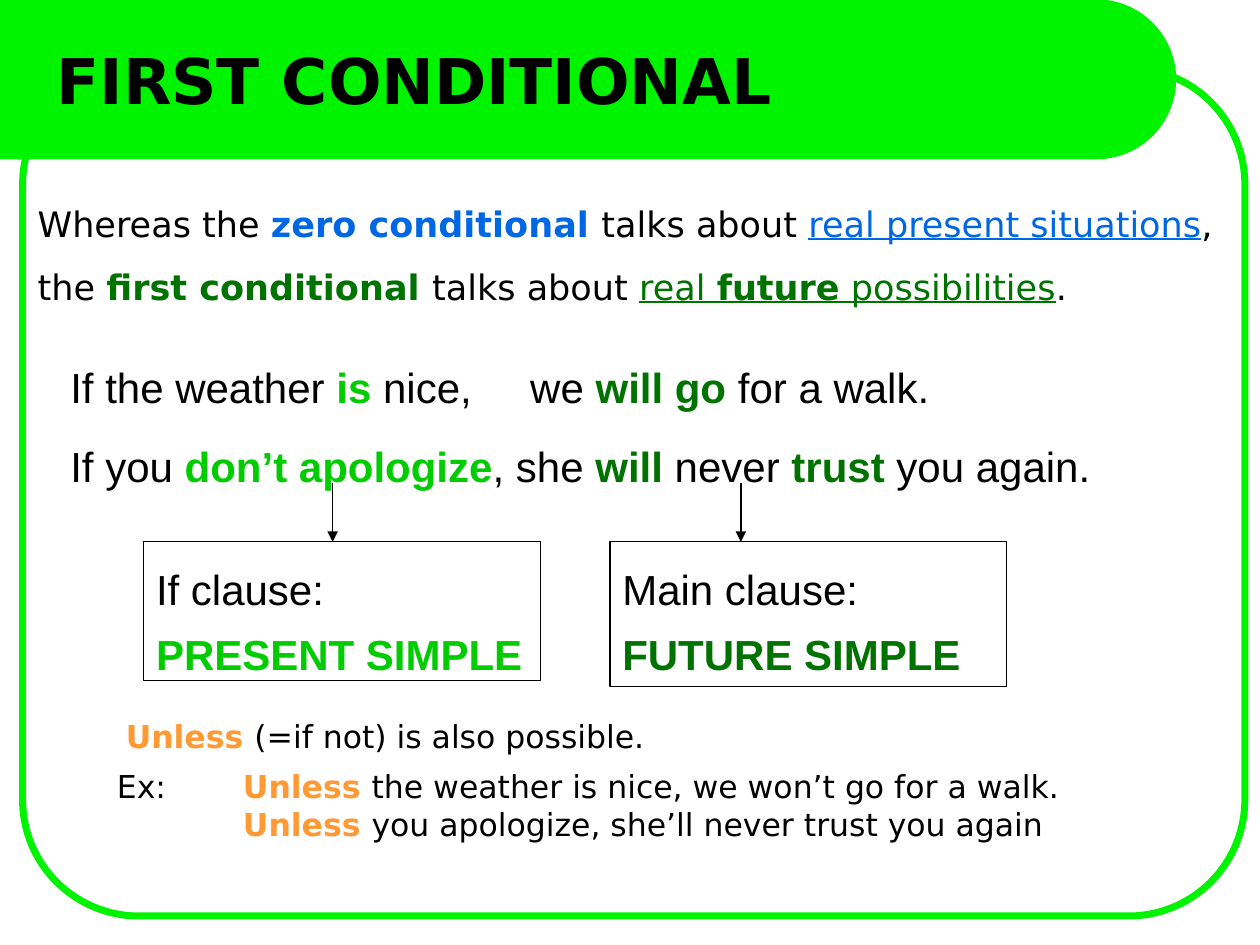
from dataclasses import dataclass
from math import cos, pi, sin

from lxml import etree
from pptx import Presentation
from pptx.dml.color import RGBColor
from pptx.enum.shapes import MSO_CONNECTOR, MSO_SHAPE
from pptx.enum.text import MSO_ANCHOR, MSO_AUTO_SIZE, PP_ALIGN
from pptx.oxml.ns import qn
from pptx.util import Inches, Pt

STRAIGHT = MSO_CONNECTOR.STRAIGHT
RECTANGLE = MSO_SHAPE.RECTANGLE
ROUNDED = MSO_SHAPE.ROUNDED_RECTANGLE
TOP = MSO_ANCHOR.TOP
GROW = MSO_AUTO_SIZE.SHAPE_TO_FIT_TEXT
LEFT = PP_ALIGN.LEFT


@dataclass(frozen=True)
class Theme:
    black: str = "000000"
    frame: str = "00F400"
    present: str = "00CC00"
    future: str = "007200"
    zero: str = "0067E4"
    unless: str = "FF9933"
    sans: str = "DejaVu Sans"
    arial: str = "Arial"
    title: int = 36
    example: int = 24
    intro: int = 20
    note: int = 18
    hairline: float = 0.75
    border: float = 4


class SlideBuilder:
    def __init__(self, page, theme):
        self.page = page
        self.theme = theme

    def outline(self, shape, color, width):
        shape.line.color.rgb = RGBColor.from_string(color)
        shape.line.width = Pt(width)

    def frame(self, left, top, width, height, kind, color, line_width):
        """Outlined shape without fill."""
        shape = self.page.shapes.add_shape(
            kind, Inches(left), Inches(top), Inches(width), Inches(height))
        shape.shadow.inherit = False
        shape.fill.background()
        self.outline(shape, color, line_width)
        return shape

    def band(self, width, height, color):
        """Header bar from the slide corner with a half-round right end."""
        radius = height / 2
        center = width - radius
        steps = 60
        angles = [-pi / 2 + pi * step / steps for step in range(steps + 1)]
        arc = [(Inches(center + radius * cos(angle)),
                Inches(radius + radius * sin(angle))) for angle in angles]
        builder = self.page.shapes.build_freeform(0, 0)
        builder.add_line_segments(arc + [(0, Inches(height))], close=True)
        shape = builder.convert_to_shape()
        shape.shadow.inherit = False
        shape.fill.solid()
        shape.fill.fore_color.rgb = RGBColor.from_string(color)
        self.outline(shape, color, self.theme.hairline)

    def title(self, text, left, top, width, height):
        shape = self.page.shapes.title
        shape.left, shape.top = Inches(left), Inches(top)
        shape.width, shape.height = Inches(width), Inches(height)
        self.fill_text(shape, [[(text, self.theme.black, "b")]],
                       self.theme.sans, self.theme.title)
        # Bring the title in front of the header band
        self.page.shapes._spTree.append(shape._element)

    def text(self, left, top, width, height, paragraphs, font, size, **layout):
        box = self.page.shapes.add_textbox(
            Inches(left), Inches(top), Inches(width), Inches(height))
        self.fill_text(box, paragraphs, font, size, **layout)

    def fill_text(self, shape, paragraphs, font, size, spacing=1.0, before=0, tab=None):
        """Fill a shape; each run is (text, color, flags), flags b and u."""
        frame = shape.text_frame
        frame.word_wrap = True
        frame.auto_size = GROW
        frame.vertical_anchor = TOP
        for index, runs in enumerate(paragraphs):
            para = frame.add_paragraph() if index else frame.paragraphs[0]
            para.alignment = LEFT
            para.line_spacing = spacing
            para.space_before = Pt(before)
            if tab:
                self.tab_stop(para, tab)
            para.font.name = font
            para.font.size = Pt(size)
            for text, color, flags in runs:
                if text == "\n":
                    para.add_line_break()
                    continue
                span = para.add_run()
                span.text = text
                span.font.color.rgb = RGBColor.from_string(color)
                span.font.bold = "b" in flags
                span.font.underline = "u" in flags

    def tab_stop(self, para, position):
        stops = etree.SubElement(para._p.get_or_add_pPr(), qn("a:tabLst"))
        etree.SubElement(stops, qn("a:tab"), pos=str(Inches(position)), algn="l")

    def arrow(self, x, top, bottom):
        line = self.page.shapes.add_connector(
            STRAIGHT, Inches(x), Inches(top), Inches(x), Inches(bottom))
        self.outline(line, self.theme.black, self.theme.hairline)
        etree.SubElement(line.line._get_or_add_ln(), qn("a:tailEnd"), type="triangle")
        etree.SubElement(line._element.spPr, qn("a:effectLst"))

    def clause(self, left, height, arrow_x, runs):
        """Boxed clause name with the arrow that leads to it."""
        top = 4.3
        self.arrow(arrow_x, 3.83, top)
        box = self.frame(left, top, 3.15, height, RECTANGLE,
                         self.theme.black, self.theme.hairline)
        self.fill_text(box, [runs], self.theme.arial, self.theme.example,
                       spacing=1.3, before=8)


def main():
    theme = Theme()
    black, present, future = theme.black, theme.present, theme.future
    deck = Presentation()
    deck.slide_width, deck.slide_height = Inches(10), Inches(7.5)
    page = deck.slides.add_slide(deck.slide_layouts[5])
    slide = SlideBuilder(page, theme)

    # Border, header band and title
    border = slide.frame(0.18, 0.54, 9.7, 6.73, ROUNDED, theme.frame, theme.border)
    border.adjustments[0] = 0.137
    slide.band(9.33, 1.26, theme.frame)
    slide.title("FIRST CONDITIONAL", 0.35, 0.28, 8.82, 0.7)

    # Example sentences
    slide.text(0.46, 2.7, 9.28, 1.27, [
        [("If the weather ", black, ""), ("is ", present, "b"),
         ("nice,\twe ", black, ""), ("will go", future, "b"),
         (" for a walk.", black, "")],
        [("If you ", black, ""), ("don’t apologize", present, "b"),
         (", she ", black, ""), ("will ", future, "b"), ("never ", black, ""),
         ("trust ", future, "b"), ("you again.", black, "")],
    ], theme.arial, theme.example, spacing=1.3, before=8, tab=3.65)

    # Clause boxes
    slide.clause(1.14, 1.1, 2.64, [
        ("If clause: ", black, ""), ("PRESENT SIMPLE", present, "b")])
    slide.clause(4.84, 1.15, 5.88, [
        ("Main clause:", black, ""), ("\n", black, ""),
        ("FUTURE SIMPLE", future, "b")])

    # Notes on "unless"
    unless = ("Unless ", theme.unless, "b")
    slide.text(0.9, 5.64, 5.2, 0.4, [
        [unless, ("(=if not) is also possible.", black, "")],
    ], theme.sans, theme.note)
    slide.text(0.83, 6.04, 8.51, 0.71, [
        [("Ex: \t", black, ""), unless,
         ("the weather is nice, we won’t go for a walk.", black, "")],
        [("\t", black, ""), unless,
         ("you apologize, she’ll never trust you again", black, "")],
    ], theme.sans, theme.note, tab=1)

    # Introduction
    slide.text(0.2, 1.39, 9.55, 1.11, [
        [("Whereas the ", black, ""), ("zero conditional ", theme.zero, "b"),
         ("talks about ", black, ""), ("real present situations", theme.zero, "u"),
         (", the ", black, ""), ("first conditional ", future, "b"),
         ("talks about ", black, ""), ("real ", future, "u"),
         ("future", future, "bu"), (" possibilities", future, "u"),
         (".", black, "")],
    ], theme.sans, theme.intro, spacing=1.5, before=6)

    deck.save("out.pptx")


if __name__ == "__main__":
    main()
